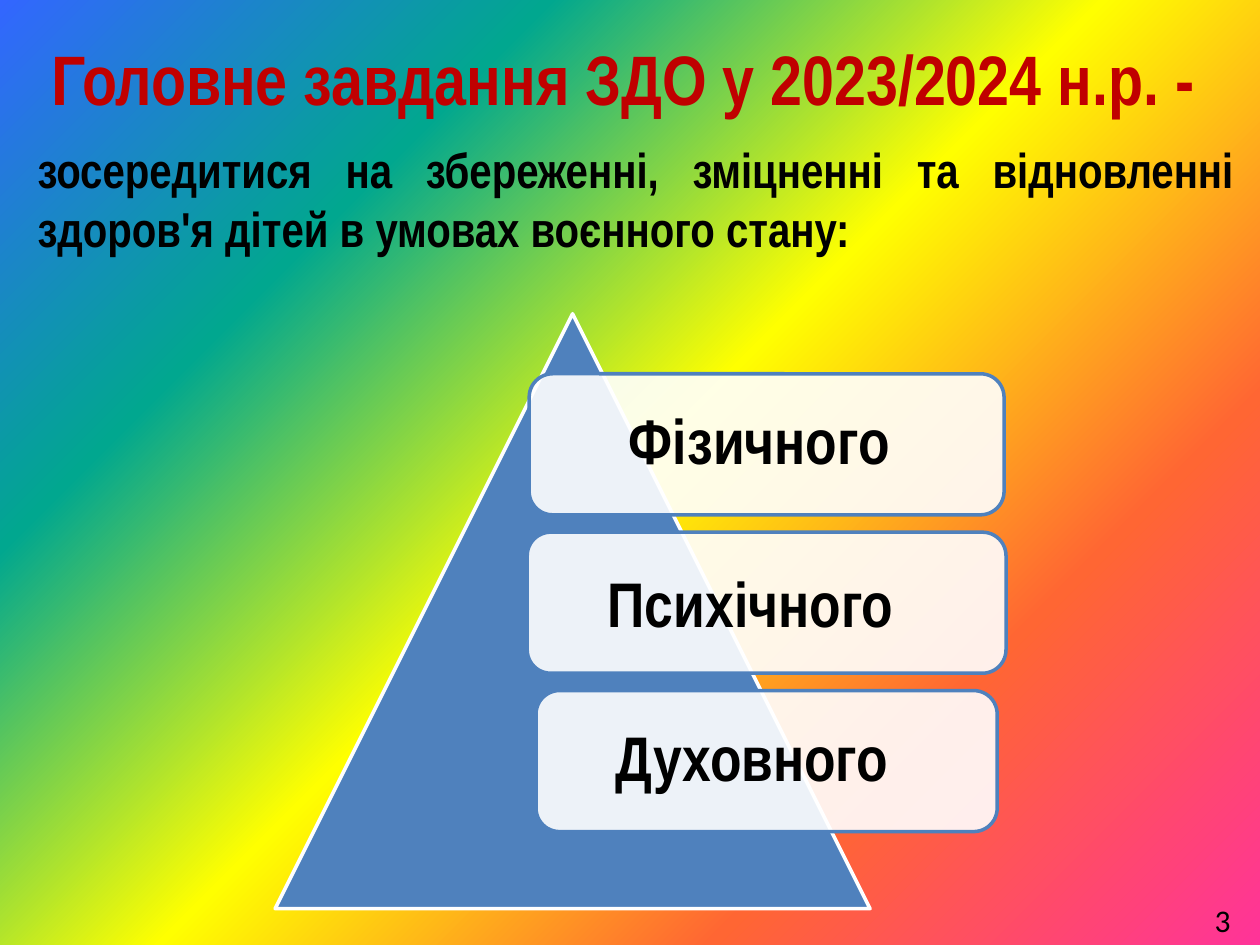
from dataclasses import dataclass

from lxml.etree import SubElement
from pptx import Presentation
from pptx.dml.color import RGBColor as Color
from pptx.enum.shapes import MSO_SHAPE as ShapeKind
from pptx.enum.text import MSO_ANCHOR as Anchor, MSO_AUTO_SIZE as AutoSize, PP_ALIGN as Align
from pptx.oxml.ns import qn
from pptx.util import Pt


@dataclass(frozen=True)
class Theme:
    heading: str = "C00000"
    ink: str = "000000"
    accent: str = "4F81BD"
    paper: str = "FFFFFF"
    rainbow: tuple[str, ...] = ("FF3399", "FF6633", "FFFF00", "01A78F", "3366FF")
    card_opacity: int = 90
    outline: float = 2
    main_font: str = "Arial Narrow"
    number_font: str = "Calibri"
    title_size: float = 40
    card_size: float = 36
    spacer_size: float = 44
    body_size: float = 28
    number_size: float = 18


@dataclass(frozen=True)
class Box:
    left: float
    top: float
    width: float
    height: float

    def lengths(self) -> tuple[Pt, ...]:
        return tuple(Pt(value) for value in (self.left, self.top, self.width, self.height))


@dataclass(frozen=True)
class TextRun:
    text: str
    size: float
    color: str
    bold: bool = True
    font: str = "Arial Narrow"


@dataclass(frozen=True)
class Card:
    width: float
    runs: tuple[TextRun, ...]


THEME = Theme()
CARD_CENTER = 438.1
CARD_TOP = 213.6
CARD_HEIGHT = 80.6
CARD_PITCH = 90.5

CARDS = (
    Card(271.4, (TextRun("Фізичного ", THEME.card_size, THEME.ink),)),
    Card(273.6, (
        TextRun("Психічного ", THEME.card_size, THEME.ink),
        TextRun(" ", THEME.spacer_size, THEME.ink, bold=False),
    )),
    Card(263.5, (TextRun("Духовного  ", THEME.card_size, THEME.ink),)),
)


def paint_background(slide) -> None:
    slide.background.fill.gradient()
    gradient = next(slide.element.iter(qn("a:gradFill")))
    for child in list(gradient):
        gradient.remove(child)
    stops = SubElement(gradient, qn("a:gsLst"))
    step = 100000 // (len(THEME.rainbow) - 1)
    for index, color in enumerate(THEME.rainbow):
        stop = SubElement(stops, qn("a:gs"), pos=str(index * step))
        SubElement(stop, qn("a:srgbClr"), val=color)
    circle = SubElement(gradient, qn("a:path"), {"path": "circle"})
    SubElement(circle, qn("a:fillToRect"), l="100000", t="100000")


def write_text(shape, runs: tuple[TextRun, ...], align: Align, anchor: Anchor):
    frame = shape.text_frame
    frame.word_wrap = True
    frame.vertical_anchor = anchor
    paragraph = frame.paragraphs[0]
    paragraph.alignment = align
    for item in runs:
        run = paragraph.add_run()
        run.text = item.text
        run.font.name = item.font
        run.font.size = Pt(item.size)
        run.font.bold = item.bold
        run.font.color.rgb = Color.from_string(item.color)
    return frame


def add_text(slide, box: Box, run: TextRun, align: Align, anchor: Anchor = Anchor.TOP):
    return write_text(slide.shapes.add_textbox(*box.lengths()), (run,), align, anchor)


def add_outlined(slide, kind: ShapeKind, box: Box, fill: str, line: str):
    shape = slide.shapes.add_shape(kind, *box.lengths())
    shape.shadow.inherit = False
    shape.fill.solid()
    shape.fill.fore_color.rgb = Color.from_string(fill)
    shape.line.color.rgb = Color.from_string(line)
    shape.line.width = Pt(THEME.outline)
    return shape


def add_card(slide, card: Card, top: float) -> None:
    box = Box(CARD_CENTER - card.width / 2, top, card.width, CARD_HEIGHT)
    shape = add_outlined(slide, ShapeKind.ROUNDED_RECTANGLE, box, THEME.paper, THEME.accent)
    color = shape.fill._xPr.find(qn("a:solidFill")).find(qn("a:srgbClr"))
    SubElement(color, qn("a:alpha"), val=str(THEME.card_opacity * 1000))
    frame = write_text(shape, card.runs, Align.CENTER, Anchor.MIDDLE)
    frame.paragraphs[0].line_spacing = 0.9


def main() -> None:
    presentation = Presentation()
    presentation.slide_width, presentation.slide_height = Pt(720), Pt(540)
    slide = presentation.slides.add_slide(presentation.slide_layouts[6])
    paint_background(slide)

    title = TextRun("Головне завдання ЗДО у 2023/2024 н.р. - ", THEME.title_size, THEME.heading)
    add_text(slide, Box(14.4, 0, 692, 88.5), title, Align.CENTER, Anchor.MIDDLE)

    pyramid = Box(157.2, 179.3, 340, 340)
    add_outlined(slide, ShapeKind.ISOSCELES_TRIANGLE, pyramid, THEME.accent, THEME.paper)
    for index, card in enumerate(CARDS):
        add_card(slide, card, CARD_TOP + index * CARD_PITCH)

    task = TextRun(
        "зосередитися на збереженні, зміцненні та відновленні "
        "здоров'я дітей в умовах воєнного стану: ",
        THEME.body_size, THEME.ink,
    )
    add_text(slide, Box(14.4, 76.3, 697.5, 75), task, Align.JUSTIFY)

    number = TextRun("3", THEME.number_size, THEME.ink, bold=False, font=THEME.number_font)
    frame = add_text(slide, Box(687, 511.2, 23.8, 28.8), number, Align.LEFT)
    frame.word_wrap = False
    frame.auto_size = AutoSize.SHAPE_TO_FIT_TEXT

    presentation.save("out.pptx")


if __name__ == "__main__":
    main()
